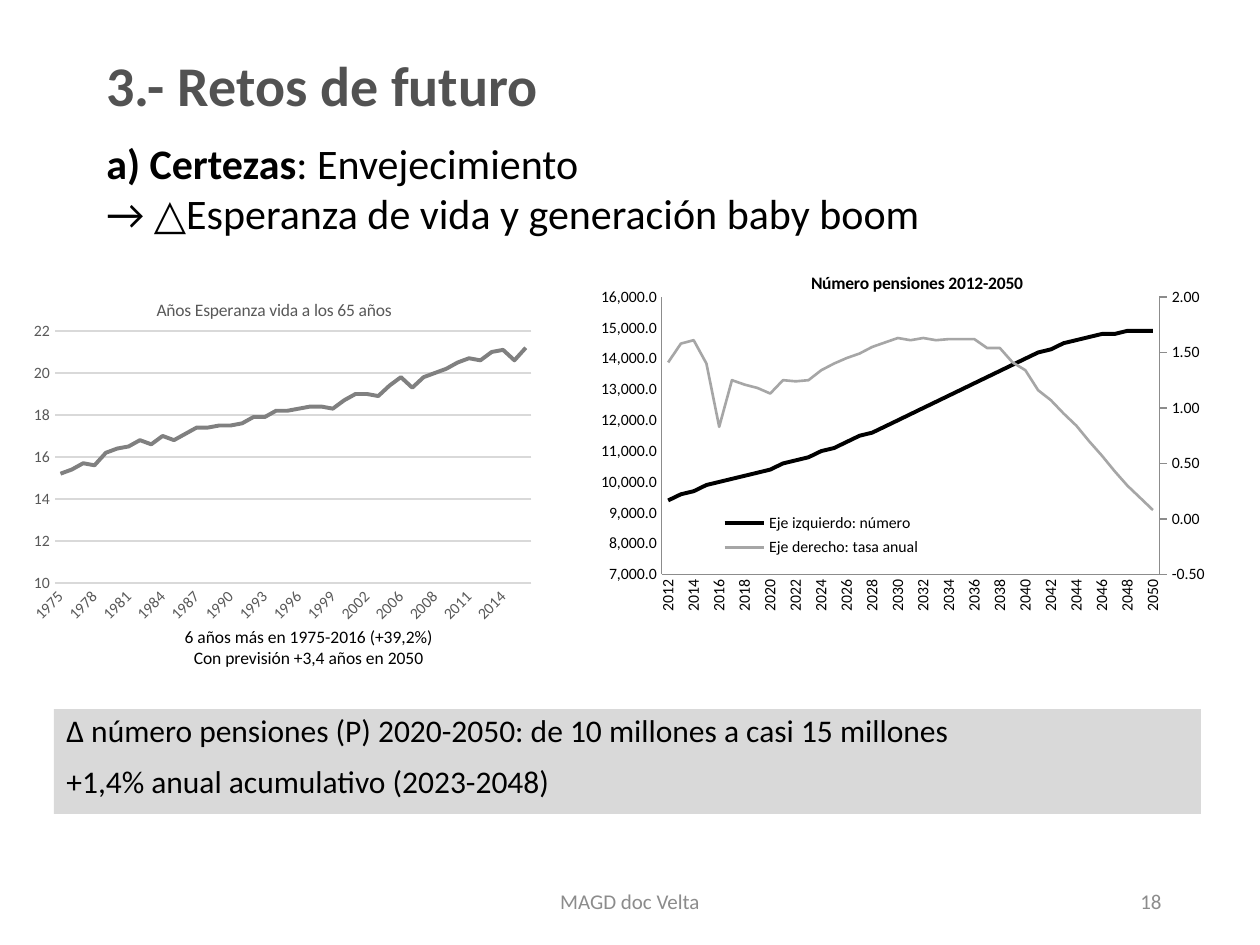
from copy import deepcopy

from lxml import etree
from pptx import Presentation
from pptx.chart.axis import ValueAxis
from pptx.chart.data import CategoryChartData
from pptx.dml.color import RGBColor
from pptx.enum.chart import XL_CHART_TYPE, XL_LEGEND_POSITION, XL_TICK_MARK
from pptx.enum.text import MSO_ANCHOR, PP_ALIGN
from pptx.oxml.ns import qn
from pptx.util import Pt

PX = 914400 / 126
FONT = "Calibri"
LINE = XL_CHART_TYPE.LINE
LEGEND_RIGHT = XL_LEGEND_POSITION.RIGHT
TICK_NONE, TICK_OUT = XL_TICK_MARK.NONE, XL_TICK_MARK.OUTSIDE
TOP, MIDDLE = MSO_ANCHOR.TOP, MSO_ANCHOR.MIDDLE
LEFT, CENTER, RIGHT = PP_ALIGN.LEFT, PP_ALIGN.CENTER, PP_ALIGN.RIGHT

BLACK = RGBColor(0x00, 0x00, 0x00)
TITLE_GRAY = RGBColor(0x52, 0x52, 0x52)
LABEL_GRAY = RGBColor(0x59, 0x59, 0x59)
SERIES_GRAY = RGBColor(0x80, 0x80, 0x80)
FOOTER_GRAY = RGBColor(0x8C, 0x8C, 0x8C)
RATE_GRAY = RGBColor(0xA6, 0xA6, 0xA6)
PALE_GRAY = RGBColor(0xD9, 0xD9, 0xD9)

LIFE_YEARS = [*range(1975, 2005), 2006, *range(2006, 2017)]
LIFE_EXPECTANCY = [
    15.2, 15.4, 15.7, 15.6, 16.2, 16.4, 16.5, 16.8, 16.6, 17, 16.8, 17.1, 17.4, 17.4,
    17.5, 17.5, 17.6, 17.9, 17.9, 18.2, 18.2, 18.3, 18.4, 18.4, 18.3, 18.7, 19, 19,
    18.9, 19.4, 19.8, 19.3, 19.8, 20, 20.2, 20.5, 20.7, 20.6, 21, 21.1, 20.6, 21.2]
PENSION_YEARS = range(2012, 2051)
PENSIONS = [
    9400, 9600, 9700, 9900, 10000, 10100, 10200, 10300, 10400, 10600, 10700, 10800, 11000,
    11100, 11300, 11500, 11600, 11800, 12000, 12200, 12400, 12600, 12800, 13000, 13200, 13400,
    13600, 13800, 14000, 14200, 14300, 14500, 14600, 14700, 14800, 14800, 14900, 14900, 14900]
PENSION_RATES = [
    1.41, 1.58, 1.61, 1.4, 0.83, 1.25, 1.21, 1.18, 1.13, 1.25, 1.24, 1.25, 1.34,
    1.4, 1.45, 1.49, 1.55, 1.59, 1.63, 1.61, 1.63, 1.61, 1.62, 1.62, 1.62, 1.54,
    1.54, 1.41, 1.34, 1.16, 1.07, 0.95, 0.84, 0.7, 0.57, 0.43, 0.3, 0.19, 0.08]


def px(*lengths):
    """Turn pixel lengths into EMU."""
    return [round(length * PX) for length in lengths]


def set_values(target, values):
    """Set each named attribute of the target."""
    for name, value in values.items():
        setattr(target, name, value)


def set_font(font, size, color, bold=False):
    """Format a font."""
    set_values(font, {"name": FONT, "size": Pt(size), "bold": bold})
    font.color.rgb = color


def set_line(line, color, width=0.75):
    """Colour a line and set its width in points."""
    line.color.rgb = color
    line.width = Pt(width)


def write_text(shape, box, lines, size, color, align=LEFT, anchor=TOP, **spacing):
    """Place a shape and fill it with lines made of (text, bold) runs."""
    set_values(shape, dict(zip(("left", "top", "width", "height"), px(*box))))
    frame = shape.text_frame
    set_values(frame, {"word_wrap": True, "vertical_anchor": anchor})
    for index, runs in enumerate(lines):
        paragraph = frame.add_paragraph() if index else frame.paragraphs[0]
        set_values(paragraph, {"alignment": align, **spacing})
        for text, bold in runs:
            run = paragraph.add_run()
            run.text = text
            set_font(run.font, size, color, bold)


def add_text(slide, box, *arguments, **options):
    """Add a text box."""
    shape = slide.shapes.add_textbox(*px(*box))
    write_text(shape, box, *arguments, **options)
    return shape


def add_child(parent, tag, value):
    """Add a chart element holding one value."""
    child = etree.SubElement(parent, qn(tag))
    child.set("val", str(value))
    return child


def set_layout(parent, position, inner=False):
    """Make a layout element with fractions of the chart area."""
    for old in parent.findall(qn("c:layout")):
        parent.remove(old)
    layout = etree.Element(qn("c:layout"))
    manual = etree.SubElement(layout, qn("c:manualLayout"))
    if inner:
        add_child(manual, "c:layoutTarget", "inner")
    for mode in ("x", "y"):
        add_child(manual, f"c:{mode}Mode", "edge")
    for name, value in zip("xywh", position):
        add_child(manual, f"c:{name}", value)
    return layout


def format_value_axis(axis, limits, unit, number_format, tick):
    """Scale a value axis and format its labels."""
    set_values(axis, {"minimum_scale": limits[0], "maximum_scale": limits[1],
                      "major_unit": unit, "major_tick_mark": tick})
    set_values(axis.tick_labels, {"number_format": number_format,
                                  "number_format_is_linked": False})


def format_category_axis(axis, color, line_color, rotation, skip):
    """Rotate the category labels and show every skip-th one."""
    axis.major_tick_mark = TICK_NONE
    set_font(axis.tick_labels.font, 9, color)
    set_line(axis.format.line, line_color)
    element = axis._element
    set_values_xml = element.find(qn("c:txPr")).find(qn("a:bodyPr"))
    set_values_xml.set("rot", str(rotation * 60000))
    set_values_xml.set("vert", "horz")
    label_skip = add_child(element, "c:tickLblSkip", skip)
    element.find(qn("c:lblOffset")).addnext(label_skip)


def add_line_chart(slide, box, title, title_format, years, series_data, plot_box):
    """Add a line chart from (name, values, colour, width) series."""
    data = CategoryChartData()
    data.categories = [str(year) for year in years]
    for name, values, _, _ in series_data:
        data.add_series(name, values)
    chart = slide.shapes.add_chart(LINE, *px(*box), data).chart
    set_font(chart.font, 9, BLACK)
    set_values(chart, {"has_legend": False, "has_title": True})
    frame = chart.chart_title.text_frame
    frame.text = title
    set_font(frame.paragraphs[0].runs[0].font, *title_format)
    plot = chart.plots[0]
    plot.vary_by_categories = False
    for series, (_, _, color, width) in zip(plot.series, series_data):
        series.smooth = False
        set_line(series.format.line, color, width)
    plot_area = chart._chartSpace.chart.plotArea
    plot_area.insert(0, set_layout(plot_area, plot_box, inner=True))
    value_element = chart.value_axis._element
    if value_element.find(qn("c:crossBetween")) is None:
        between = add_child(value_element, "c:crossBetween", "between")
        value_element.find(qn("c:crosses")).addnext(between)
    chart.value_axis.has_major_gridlines = False
    set_font(chart.value_axis.tick_labels.font, 9, BLACK)
    return chart


def move_to_right_axis(chart):
    """Move the last series to a second value axis and return that axis."""
    line = chart.plots[0]._element
    category = chart.category_axis._element
    value = chart.value_axis._element
    copies = [deepcopy(element) for element in (line, category, value)]
    right_line, right_category, right_value = copies
    ids = {category.find(qn("c:axId")).get("val"): "5001",
           value.find(qn("c:axId")).get("val"): "5002"}
    for element in copies:
        for reference in element.iter(qn("c:axId"), qn("c:crossAx")):
            reference.set("val", ids[reference.get("val")])
    line.remove(line.findall(qn("c:ser"))[-1])
    for series in right_line.findall(qn("c:ser"))[:-1]:
        right_line.remove(series)
    line.addnext(right_line)
    value.addnext(right_value)
    right_value.addnext(right_category)
    right_category.find(qn("c:delete")).set("val", "1")
    right_value.find(qn("c:axPos")).set("val", "r")
    right_value.find(qn("c:crosses")).set("val", "max")
    return ValueAxis(right_value)


def add_life_chart(slide):
    """Add the life expectancy chart."""
    chart = add_line_chart(
        slide, (0, 282, 548, 350), "Años Esperanza vida a los 65 años", (10, LABEL_GRAY),
        LIFE_YEARS, [("Series 1", LIFE_EXPECTANCY, SERIES_GRAY, 2.25)], (0.1, 0.14, 0.87, 0.72))
    axis = chart.value_axis
    format_value_axis(axis, (10, 22), 2, "0", TICK_NONE)
    set_font(axis.tick_labels.font, 9, LABEL_GRAY)
    axis.format.line.fill.background()
    axis.has_major_gridlines = True
    set_line(axis.major_gridlines.format.line, PALE_GRAY)
    format_category_axis(chart.category_axis, LABEL_GRAY, PALE_GRAY, -45, 3)


def add_pension_chart(slide):
    """Add the pensions chart with its rate on the right axis."""
    chart = add_line_chart(
        slide, (598, 254, 638, 391), "Número pensiones 2012-2050", (10, BLACK, True),
        PENSION_YEARS, [("Eje izquierdo: número", PENSIONS, BLACK, 2.25),
                        ("Eje derecho: tasa anual", PENSION_RATES, RATE_GRAY, 1.5)],
        (0.1, 0.11, 0.78, 0.71))
    set_line(chart.value_axis.format.line, FOOTER_GRAY)
    format_value_axis(chart.value_axis, (7000, 16000), 1000, "#,##0.0", TICK_NONE)
    format_category_axis(chart.category_axis, BLACK, FOOTER_GRAY, -90, 2)
    format_value_axis(move_to_right_axis(chart), (-0.5, 2), 0.5, "0.00", TICK_OUT)
    chart.has_legend = True
    set_values(chart.legend, {"position": LEGEND_RIGHT, "include_in_layout": False})
    set_font(chart.legend.font, 9, BLACK)
    legend = chart.legend._element
    legend.find(qn("c:legendPos")).addnext(set_layout(legend, (0.18, 0.65, 0.34, 0.14)))


def main():
    """Build the slide and save it."""
    presentation = Presentation()
    presentation.slide_width, presentation.slide_height = px(1260, 945)
    slide = presentation.slides.add_slide(presentation.slide_layouts[5])
    write_text(slide.shapes.title, (94, 32, 1071, 113), [[("3.- Retos de futuro", True)]],
               32, TITLE_GRAY, anchor=MIDDLE, line_spacing=0.9)
    add_text(slide, (94, 131, 1007, 115),
             [[("a) Certezas", True), (": Envejecimiento", False)],
              [("→ △Esperanza de vida y generación baby boom", False)]], 24, BLACK)
    add_pension_chart(slide)
    add_life_chart(slide)
    add_text(slide, (68, 620, 481, 67),
             [[("6 años más en 1975-2016 (+39,2%)", False)],
              [("Con previsión +3,4 años en 2050", False)]], 10, BLACK, CENTER)
    summary = add_text(
        slide, (54, 709, 1147, 105),
        [[("Δ número pensiones (P) 2020-2050: de 10 millones a casi 15 millones", False)],
         [("+1,4% anual acumulativo (2023-2048)", False)]],
        18, BLACK, line_spacing=0.9, space_before=Pt(10))
    summary.fill.solid()
    summary.fill.fore_color.rgb = PALE_GRAY
    for box, text, align in (((417, 876, 426, 50), "MAGD doc Velta", CENTER),
                             ((890, 876, 284, 50), "18", RIGHT)):
        add_text(slide, box, [[(text, False)]], 12, FOOTER_GRAY, align, MIDDLE)
    presentation.save("out.pptx")


if __name__ == "__main__":
    main()
